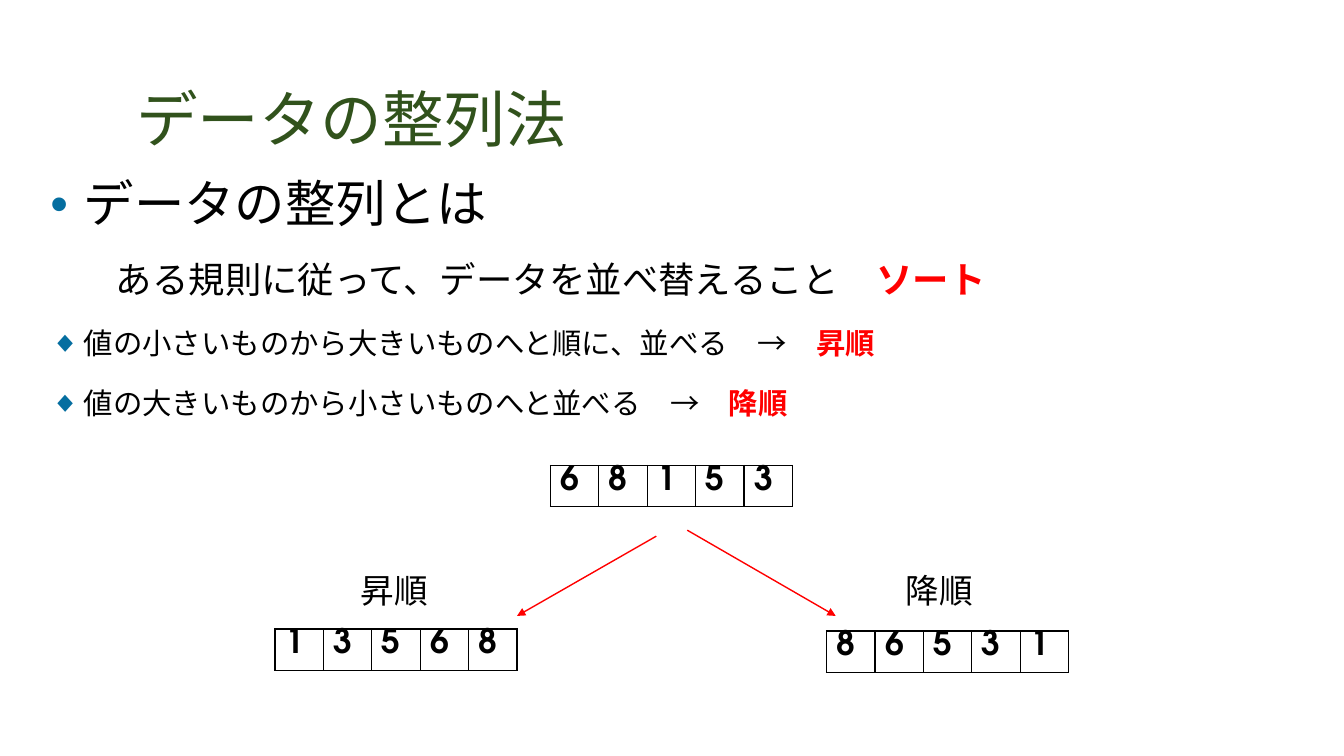
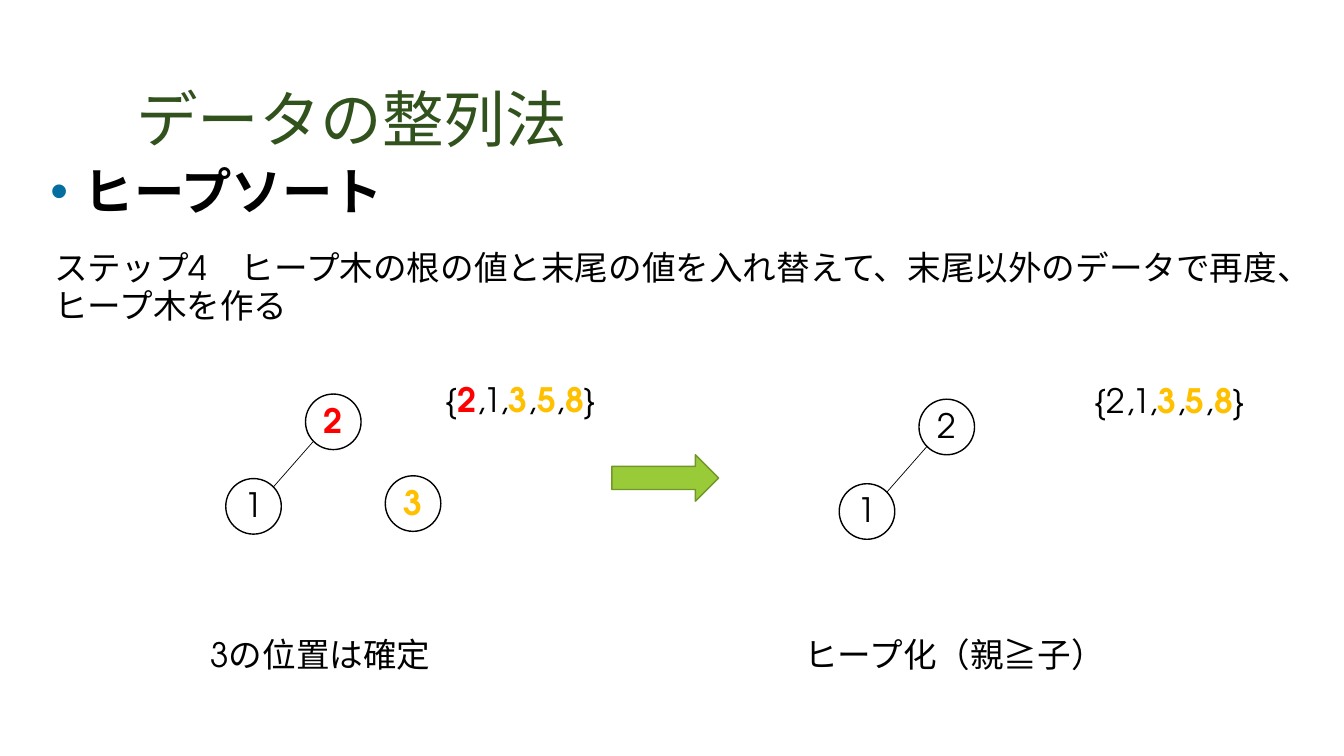
from lxml.etree import SubElement as Sub
from pptx import Presentation
from pptx.dml.color import RGBColor as Rgb
from pptx.enum.shapes import MSO_CONNECTOR as Link, MSO_SHAPE as Form
from pptx.enum.text import MSO_ANCHOR as Anchor, PP_ALIGN as Align
from pptx.oxml import parse_xml
from pptx.oxml.ns import nsdecls, qn
from pptx.util import Cm, Pt

# Shared look
BLACK, RED, GOLD, GREEN = "000000", "FF0000", "FFC000", "31521C"
DOT, LEAF, EDGE = "056EA0", "99CB38", "719629"
SANS, GEO = "Noto Sans CJK JP", "TeX Gyre Adventor"
TITLE = "データの整列法"
INSET = (0.33, 0.18)
COL, ROW = 1.22, 1.04
NODE = 1.4

# Content: runs are (text, colour, bold)
BODY = [
    (36, "•", 0, [("データの整列とは", BLACK, False)]),
    (26, None, 1.65, [
        ("ある規則に従って、データを並べ替えること　", BLACK, False),
        ("ソート", RED, True)]),
    (21, "◆", 0, [
        ("値の小さいものから大きいものへと順に、並べる　→　", BLACK, False),
        ("昇順", RED, True)]),
    (21, "◆", 0, [
        ("値の大きいものから小さいものへと並べる　→　", BLACK, False),
        ("降順", RED, True)]),
]
LISTS = [
    (13.87, 11.73, "68153"),
    (6.93, 15.85, "13568"),
    (20.83, 15.9, "86531"),
]
ARROWS = [(16.54, 13.51, 13.03, 15.52), (17.32, 13.36, 21.06, 15.52)]
NAMES = [(8.84, "昇順"), (22.58, "降順")]

HEAP = [(36, "•", 0, [("ヒープソート", BLACK, True)])]
STEP = "ステップ4　ヒープ木の根の値と末尾の値を入れ替えて、末尾以外のデータで再度、ヒープ木を作る"
# Each tree: root corner, then (dx, dy, digit, colour, bold) for its nodes
TREES = [
    (7.7, 9.93, [(0, 0, "2", RED, True), (-2.01, 2.13, "1", BLACK, False),
                 (2.01, 2.06, "3", GOLD, True)]),
    (23.16, 10.06, [(0, 0, "2", BLACK, False),
                    (-2.01, 2.13, "1", BLACK, False)]),
]
TAIL = [(",", BLACK, False), ("5", GOLD, True), (",", BLACK, False),
        ("8", GOLD, True), ("}", BLACK, False)]
SETS = [
    (10.97, 9.5, [("{", BLACK, False), ("2", RED, True), (",1,", BLACK, False),
                  ("3", GOLD, True)] + TAIL),
    (27.33, 9.53, [("{2,1,", BLACK, False), ("3", GOLD, True)] + TAIL),
]
NOTES = [(5.05, 6.81, "3の位置は確定"), (20.02, 9.07, "ヒープ化（親≧子）")]


def rgb(code):
    return Rgb.from_string(code)


def add_runs(para, runs, size, face):
    for text, hue, bold in runs:
        run = para.add_run()
        run.text = text
        font = run.font
        font.size, font.name, font.bold = Pt(size), face, bold
        font.color.rgb = rgb(hue)
        Sub(run._r.get_or_add_rPr(), qn("a:ea"), typeface=SANS)


def add_box(slide, x, y, w, h, inset=None):
    frame = slide.shapes.add_textbox(Cm(x), Cm(y), Cm(w), Cm(h)).text_frame
    frame.word_wrap = True
    if inset:
        frame.margin_left = frame.margin_right = Cm(inset[0])
        frame.margin_top = frame.margin_bottom = Cm(inset[1])
    return frame


def add_label(slide, x, y, w, h, runs):
    para = add_box(slide, x, y, w, h).paragraphs[0]
    para.line_spacing = 0.95
    add_runs(para, runs, 24, GEO)


def add_title(slide):
    frame = add_box(slide, 3.1, 0.2, 28.22, 3.89, INSET)
    frame.vertical_anchor = Anchor.BOTTOM
    para = frame.paragraphs[0]
    para.line_spacing = 0.85
    add_runs(para, [(TITLE, GREEN, False)], 44, SANS)


def add_body(slide, y, h, items):
    frame = add_box(slide, 0.94, y, 32, h, INSET)
    for i, (size, mark, left, runs) in enumerate(items):
        para = frame.add_paragraph() if i else frame.paragraphs[0]
        para.line_spacing, para.space_before = 0.95, Pt(18.7)
        props = para._p.get_or_add_pPr()
        hang = 0.84 if mark else 0
        props.set("marL", str(Cm(left + hang)))
        props.set("indent", str(-Cm(hang)))
        if mark:
            Sub(Sub(props, qn("a:buClr")), qn("a:srgbClr"), val=DOT)
            Sub(props, qn("a:buFont"), typeface="Arial")
            Sub(props, qn("a:buChar"), char=mark)
        add_runs(para, runs, size, SANS)


def add_list(slide, x, y, digits):
    n = len(digits)
    table = slide.shapes.add_table(
        1, n, Cm(x), Cm(y), Cm(COL * n), Cm(ROW)).table
    table.first_row = table.horz_banding = False
    table.rows[0].height = Cm(ROW)
    for i, digit in enumerate(digits):
        table.columns[i].width = Cm(COL)
        cell = table.cell(0, i)
        cell.margin_top = cell.margin_bottom = 0
        cell.fill.background()
        add_runs(cell.text_frame.paragraphs[0], [(digit, BLACK, True)], 24, GEO)
        props = cell._tc.get_or_add_tcPr()
        for at, side in enumerate("LRTB"):
            props.insert(at, parse_xml(
                f'<a:ln{side} {nsdecls("a")} w="12700"><a:solidFill>'
                f'<a:srgbClr val="{BLACK}"/></a:solidFill></a:ln{side}>'))


def add_line(slide, x1, y1, x2, y2, hue, width, head=False):
    line = slide.shapes.add_connector(
        Link.STRAIGHT, Cm(x1), Cm(y1), Cm(x2), Cm(y2))
    line.line.color.rgb, line.line.width = rgb(hue), Pt(width)
    if head:
        Sub(line.line._get_or_add_ln(), qn("a:tailEnd"), type="triangle")
    Sub(line._element.spPr, qn("a:effectLst"))


def add_form(slide, form, x, y, w, h, edge, fill=None):
    shape = slide.shapes.add_shape(form, Cm(x), Cm(y), Cm(w), Cm(h))
    shape.shadow.inherit = False
    shape.line.color.rgb, shape.line.width = rgb(edge), Pt(1)
    if fill:
        shape.fill.solid()
        shape.fill.fore_color.rgb = rgb(fill)
    else:
        shape.fill.background()
    return shape


def add_tree(slide, x, y, nodes):
    for dx, dy, *run in nodes:
        node = add_form(slide, Form.OVAL, x + dx, y + dy, NODE, NODE, BLACK)
        frame = node.text_frame
        frame.word_wrap = False
        frame.vertical_anchor = Anchor.MIDDLE
        frame.margin_left = frame.margin_right = 0
        frame.margin_top = frame.margin_bottom = 0
        para = frame.paragraphs[0]
        para.alignment, para.line_spacing = Align.CENTER, 0.95
        add_runs(para, [run], 24, GEO)
    add_line(slide, x + 0.2, y + 1.19, x - 0.81, y + 2.34, BLACK, 0.5)


def new_slide(deck):
    slide = deck.slides.add_slide(deck.slide_layouts[6])
    add_title(slide)
    return slide


def main():
    deck = Presentation()
    deck.slide_width, deck.slide_height = Cm(33.87), Cm(19.05)

    # What sorting is
    slide = new_slide(deck)
    add_body(slide, 4.27, 14.35, BODY)
    for x, y, digits in LISTS:
        add_list(slide, x, y, digits)
    for ends in ARROWS:
        add_line(slide, *ends, RED, 1, head=True)
    for x, name in NAMES:
        add_label(slide, x, 14.3, 2.59, 1.22, [(name, BLACK, False)])

    # Heap sort, step 4
    slide = new_slide(deck)
    add_body(slide, 3.96, 1.93, HEAP)
    add_label(slide, 1.12, 6.17, 31.39, 2.21, [(STEP, BLACK, False)])
    for x, y, nodes in TREES:
        add_tree(slide, x, y, nodes)
    add_form(slide, Form.RIGHT_ARROW, 15.42, 11.46, 2.69, 1.17, EDGE, LEAF)
    for x, y, runs in SETS:
        add_label(slide, x, y, 4.6, 2.21, runs)
    for x, w, note in NOTES:
        add_label(slide, x, 15.93, w, 1.22, [(note, BLACK, False)])

    deck.save("out.pptx")


if __name__ == "__main__":
    main()
